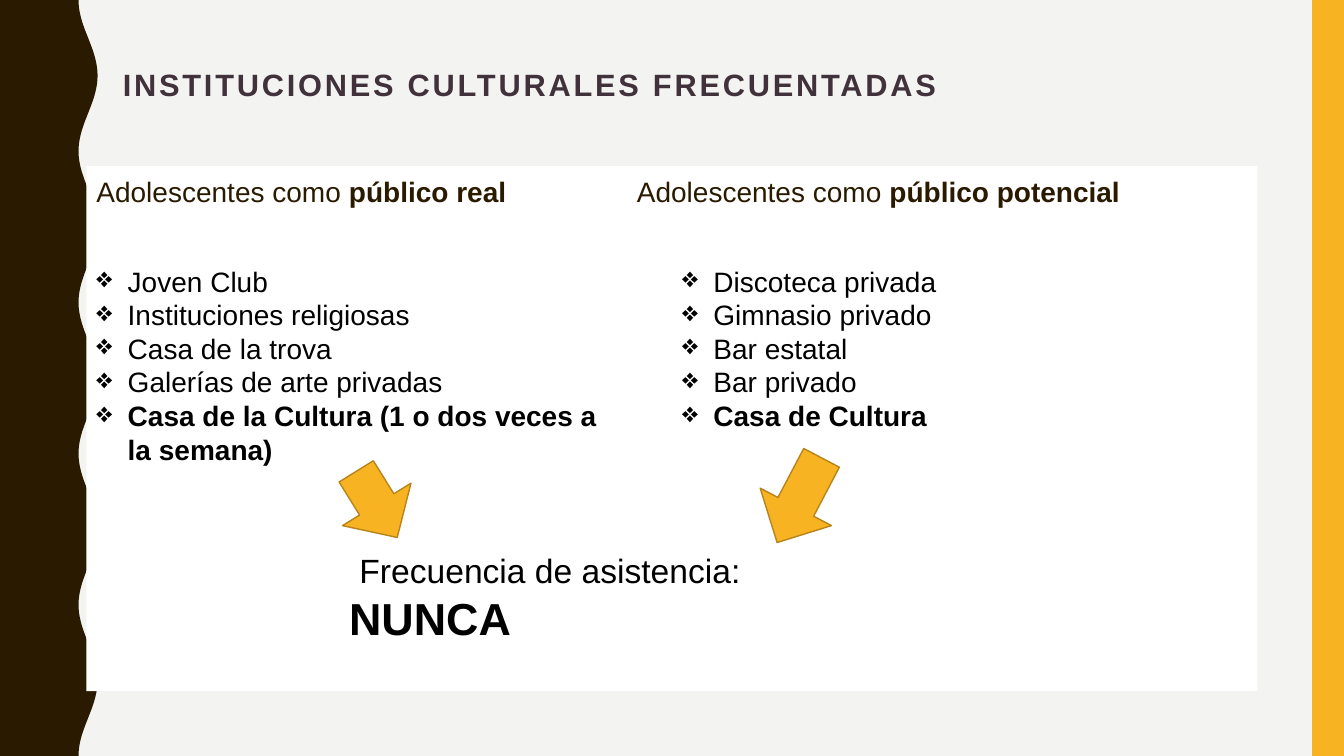
import math

from lxml import etree
from pptx import Presentation
from pptx import util as u
from pptx.dml.color import RGBColor
from pptx.enum import shapes, text
from pptx.oxml.ns import qn

PAPER = RGBColor(0xF3, 0xF3, 0xF2)
BROWN = RGBColor(0x2A, 0x1A, 0x00)
AMBER = RGBColor(0xF8, 0xB3, 0x23)
AMBER_EDGE = RGBColor(0xB7, 0x84, 0x1A)
PLUM = RGBColor(0x41, 0x31, 0x3B)
WHITE = RGBColor(0xFF, 0xFF, 0xFF)
BLACK = RGBColor(0x00, 0x00, 0x00)

WIDTH, HEIGHT = 33.87, 19.05
WAVES = 5
STEPS_PER_WAVE = 36


def add_run(paragraph, words, size=20, color=BLACK, bold=False, spacing=None):
    run = paragraph.add_run()
    run.text = words
    font = run.font
    font.name, font.size, font.bold = "Arial", u.Pt(size), bold
    font.color.rgb = color
    if spacing:
        run._r.get_or_add_rPr().set("spc", str(spacing * 100))


def set_indent(paragraph, left, first):
    properties = paragraph._p.get_or_add_pPr()
    properties.set("marL", str(u.Cm(left)))
    properties.set("indent", str(u.Cm(first)))
    return properties


class Deck:
    def __init__(self):
        self.presentation = Presentation()
        self.presentation.slide_width = u.Cm(WIDTH)
        self.presentation.slide_height = u.Cm(HEIGHT)
        self.slide = self.presentation.slides.add_slide(
            self.presentation.slide_layouts[5])
        background = self.slide.background.fill
        background.solid()
        background.fore_color.rgb = PAPER

    def paint(self, shape, fill, edge=None):
        shape.shadow.inherit = False
        shape.fill.solid()
        shape.fill.fore_color.rgb = fill
        if edge is None:
            shape.line.fill.background()
        else:
            shape.line.color.rgb = edge
            shape.line.width = u.Pt(1)
        return shape

    def title(self, words, left, top, width, height):
        heading = self.slide.shapes.title
        heading.left, heading.top = u.Cm(left), u.Cm(top)
        heading.width, heading.height = u.Cm(width), u.Cm(height)
        frame = heading.text_frame
        frame.word_wrap = True
        frame.vertical_anchor = text.MSO_ANCHOR.TOP
        paragraph = frame.paragraphs[0]
        paragraph.alignment = text.PP_ALIGN.LEFT
        paragraph.line_spacing = 0.9
        add_run(paragraph, words, size=22, color=PLUM, bold=True, spacing=2)

    def wavy_band(self, middle, swing):
        """Draw the left band, whose right edge is a cosine wave."""
        count = WAVES * STEPS_PER_WAVE
        edge = [(middle - swing * math.cos(2 * math.pi * i / STEPS_PER_WAVE),
                 HEIGHT * i / count) for i in range(count + 1)]
        points = [(u.Cm(x), u.Cm(y)) for x, y in edge + [(0, HEIGHT)]]
        builder = self.slide.shapes.build_freeform(0, 0)
        builder.add_line_segments(points, close=True)
        self.paint(builder.convert_to_shape(), BROWN)

    def block(self, kind, left, top, width, height, fill, edge=None, rotation=0):
        shape = self.slide.shapes.add_shape(
            kind, u.Cm(left), u.Cm(top), u.Cm(width), u.Cm(height))
        shape.rotation = rotation
        return self.paint(shape, fill, edge)

    def panel(self, headings, second_column, left, top, width, height):
        """Draw the white panel with its column headings set on a tab stop."""
        panel = self.block(shapes.MSO_SHAPE.RECTANGLE,
                           left, top, width, height, WHITE)
        frame = panel.text_frame
        frame.word_wrap = True
        frame.vertical_anchor = text.MSO_ANCHOR.TOP
        paragraph = frame.paragraphs[0]
        paragraph.alignment = text.PP_ALIGN.LEFT
        paragraph.line_spacing = 1.1
        stops = etree.SubElement(paragraph._p.get_or_add_pPr(), qn("a:tabLst"))
        etree.SubElement(stops, qn("a:tab"), pos=str(u.Cm(second_column)), algn="l")
        for index, (opening, audience) in enumerate(headings):
            add_run(paragraph, "\t" * index + opening, color=BROWN)
            add_run(paragraph, audience, color=BROWN, bold=True)

    def text_box(self, left, top, width, height):
        box = self.slide.shapes.add_textbox(
            u.Cm(left), u.Cm(top), u.Cm(width), u.Cm(height))
        frame = box.text_frame
        frame.word_wrap = True
        frame.auto_size = text.MSO_AUTO_SIZE.SHAPE_TO_FIT_TEXT
        return frame

    def bullets(self, places, left, top, width, height):
        """List the places, with the last one in bold."""
        frame = self.text_box(left, top, width, height)
        for index, place in enumerate(places):
            paragraph = frame.add_paragraph() if index else frame.paragraphs[0]
            properties = set_indent(paragraph, 0.79, -0.79)
            etree.SubElement(properties, qn("a:buChar"), char="❖")
            add_run(paragraph, place, bold=index == len(places) - 1)

    def frequency(self, label, answer, left, top, width, height):
        frame = self.text_box(left, top, width, height)
        label_line, answer_line = frame.paragraphs[0], frame.add_paragraph()
        set_indent(label_line, 0.71, 0)
        add_run(label_line, label, size=24)
        set_indent(answer_line, 0.45, 0)
        add_run(answer_line, answer, size=32, bold=True)


def main():
    deck = Deck()
    deck.wavy_band(middle=2.22, swing=0.24)
    deck.block(shapes.MSO_SHAPE.RECTANGLE, 33.07, 0, 0.8, HEIGHT, AMBER)
    deck.title("INSTITUCIONES CULTURALES FRECUENTADAS", 2.84, 1.63, 27, 2.67)
    deck.panel([("Adolescentes como ", "público real"),
                ("Adolescentes como ", "público potencial")],
               13.62, 2.18, 4.19, 29.51, 13.23)
    deck.bullets(["Joven Club", "Instituciones religiosas", "Casa de la trova",
                  "Galerías de arte privadas",
                  "Casa de la Cultura (1 o dos veces a la semana)"],
                 2.18, 6.53, 13.36, 5.38)
    deck.bullets(["Discoteca privada", "Gimnasio privado", "Bar estatal",
                  "Bar privado", "Casa de Cultura"],
                 16.94, 6.53, 15.37, 4.52)
    for left, top, height, rotation in [(8.48, 11.73, 1.96, 328.2),
                                        (19.13, 11.4, 2.41, 27.7)]:
        deck.block(shapes.MSO_SHAPE.DOWN_ARROW, left, top, 2.03, height,
                   AMBER, AMBER_EDGE, rotation)
    deck.frequency("Frecuencia de asistencia:", "NUNCA", 8.1, 13.74, 13.82, 2.64)
    deck.presentation.save("out.pptx")


if __name__ == "__main__":
    main()
